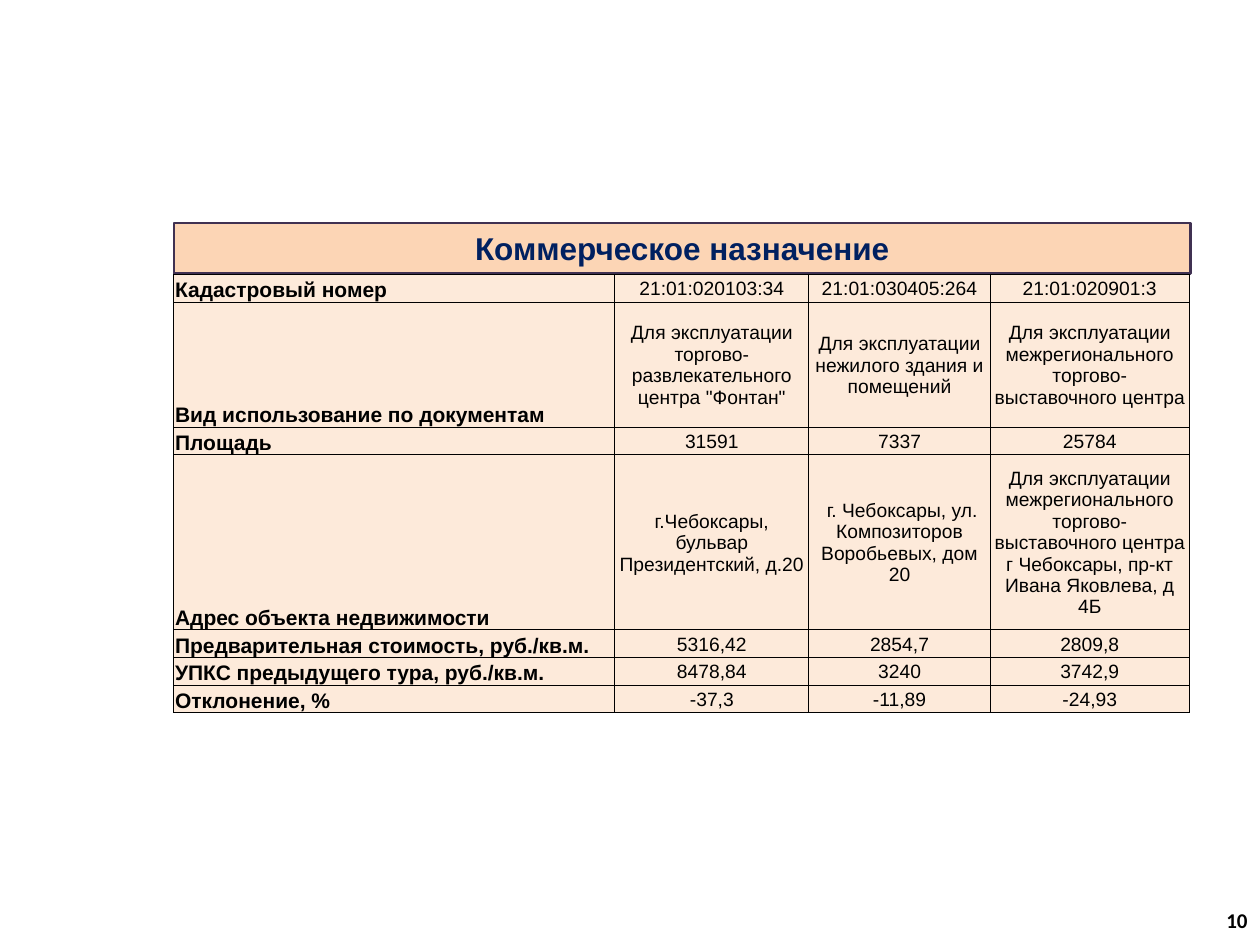
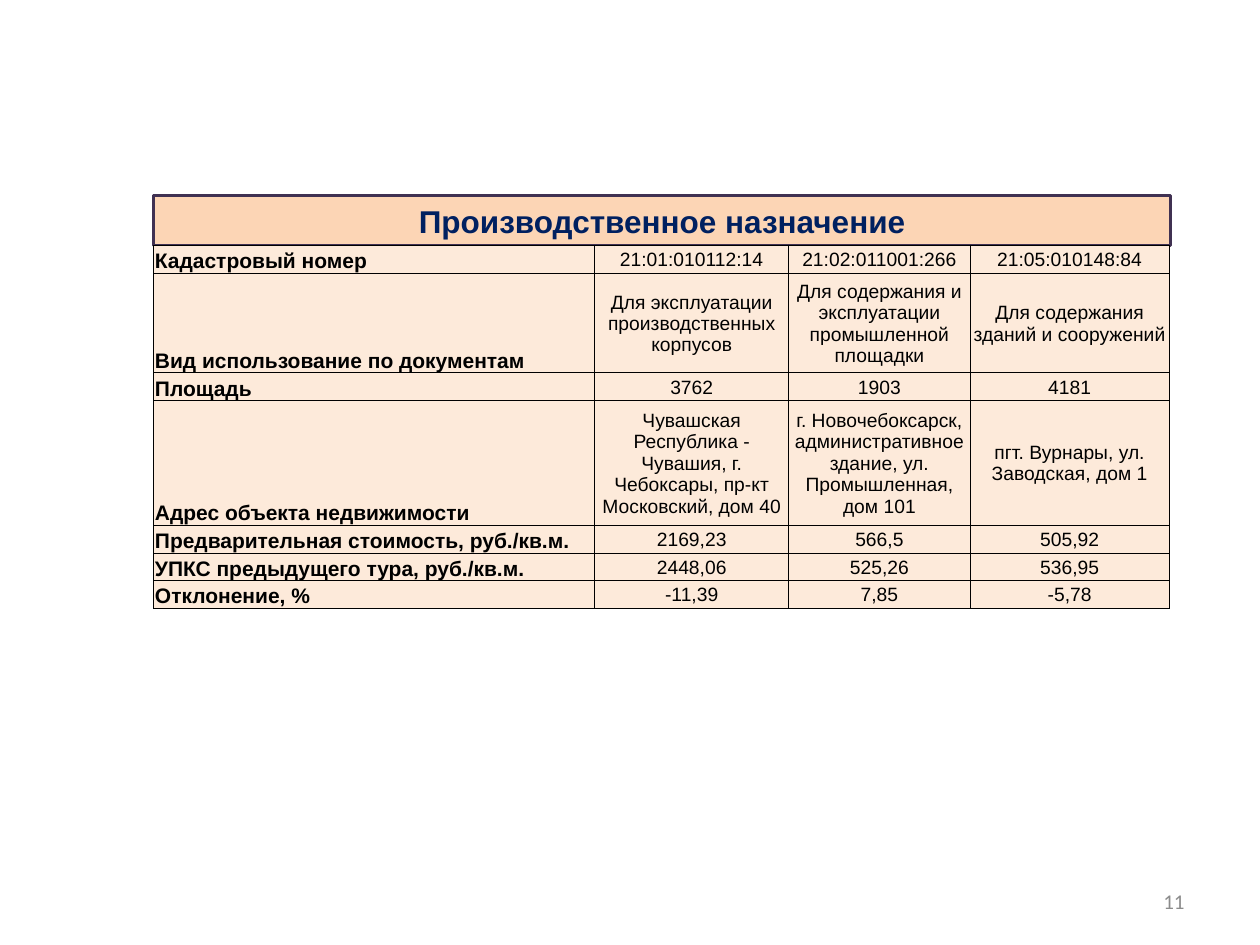
import pptx
import pptx.dml.color
import pptx.enum.text
import pptx.oxml.ns
import pptx.util
import lxml.etree

Inches = pptx.util.Inches
Pt = pptx.util.Pt
ALIGN = pptx.enum.text.PP_ALIGN
ANCHOR = pptx.enum.text.MSO_ANCHOR

COLOURS = {
    "band": "FCD5B5",
    "band_line": "403152",
    "title": "002060",
    "cell": "FDEADA",
    "ink": "000000",
    "muted": "8C8C8C",
}
TITLE_ONLY_LAYOUT = 5
TABLE_WIDTH = 8.07
BAND_HEIGHT = 0.4
COLUMN_WIDTHS = [3.5, 1.54, 1.44, 1.58]
LINE_ROW = 0.22
ROW_LABELS = [
    "Кадастровый номер",
    "Вид использование по документам",
    "Площадь",
    "Адрес объекта недвижимости",
    "Предварительная стоимость, руб./кв.м.",
    "УПКС предыдущего тура, руб./кв.м.",
    "Отклонение, %",
]

COMMERCIAL = [
    ["21:01:020103:34", "21:01:030405:264", "21:01:020901:3"],
    [
        "Для эксплуатации торгово-развлекательного центра \"Фонтан\"",
        "Для эксплуатации нежилого здания и помещений",
        "Для эксплуатации межрегионального торгово-выставочного центра",
    ],
    ["31591", "7337", "25784"],
    [
        "г.Чебоксары, бульвар Президентский, д.20",
        " г. Чебоксары, ул. Композиторов Воробьевых, дом 20",
        "Для эксплуатации межрегионального торгово-выставочного центра "
        "г Чебоксары, пр-кт Ивана Яковлева, д 4Б",
    ],
    ["5316,42", "2854,7", "2809,8"],
    ["8478,84", "3240", "3742,9"],
    ["-37,3", "-11,89", "-24,93"],
]

INDUSTRIAL = [
    ["21:01:010112:14", "21:02:011001:266", "21:05:010148:84"],
    [
        "Для эксплуатации производственных корпусов",
        "Для содержания и эксплуатации промышленной площадки",
        "Для содержания зданий и сооружений",
    ],
    ["3762", "1903", "4181"],
    [
        "Чувашская Республика - Чувашия, г. Чебоксары, пр-кт Московский, дом 40",
        "г. Новочебоксарск, административное здание, ул. Промышленная, дом 101",
        "пгт. Вурнары, ул. Заводская, дом 1",
    ],
    ["2169,23", "566,5", "505,92"],
    ["2448,06", "525,26", "536,95"],
    ["-11,39", "7,85", "-5,78"],
]


class SlideBuilder:
    def __init__(self, deck):
        self.deck = deck
        self.page = None

    def colour(self, name):
        return pptx.dml.color.RGBColor.from_string(COLOURS[name])

    def new_page(self):
        layout = self.deck.slide_layouts[TITLE_ONLY_LAYOUT]
        self.page = self.deck.slides.add_slide(layout)

    def add_text(self, frame, text, size, colour="ink", bold=False,
                 align=ALIGN.LEFT, font="Arial"):
        para = frame.paragraphs[0]
        para.alignment = align
        span = para.add_run()
        span.text = text
        span.font.name = font
        span.font.size = Pt(size)
        span.font.bold = bold
        span.font.color.rgb = self.colour(colour)

    def title_band(self, text, left, top):
        band = self.page.shapes.title
        band.left, band.top = Inches(left), Inches(top)
        band.width, band.height = Inches(TABLE_WIDTH), Inches(BAND_HEIGHT)
        band.fill.solid()
        band.fill.fore_color.rgb = self.colour("band")
        band.line.color.rgb = self.colour("band_line")
        band.line.width = Pt(1.5)
        frame = band.text_frame
        frame.auto_size = pptx.enum.text.MSO_AUTO_SIZE.NONE
        frame.word_wrap = True
        frame.vertical_anchor = ANCHOR.MIDDLE
        self.add_text(frame, text, 18, "title", True, ALIGN.CENTER)

    def page_number(self, number, left, top, colour, bold):
        box = self.page.shapes.add_textbox(
            Inches(left), Inches(top), Inches(2.33), Inches(0.4))
        frame = box.text_frame
        frame.word_wrap = True
        frame.vertical_anchor = ANCHOR.MIDDLE
        self.add_text(frame, str(number), 12, colour, bold, ALIGN.RIGHT, "Calibri")

    def border(self, cell):
        properties = cell._tc.get_or_add_tcPr()
        for side in ("lnL", "lnR", "lnT", "lnB"):
            edge = lxml.etree.SubElement(
                properties, pptx.oxml.ns.qn("a:" + side), w=str(Pt(0.5)))
            fill = lxml.etree.SubElement(edge, pptx.oxml.ns.qn("a:solidFill"))
            lxml.etree.SubElement(
                fill, pptx.oxml.ns.qn("a:srgbClr"), val=COLOURS["ink"])

    def table_cell(self, cell, text, is_label):
        self.border(cell)
        cell.fill.solid()
        cell.fill.fore_color.rgb = self.colour("cell")
        cell.margin_left = cell.margin_right = cell.margin_top = Inches(0.01)
        cell.margin_bottom = 0
        cell.vertical_anchor = ANCHOR.BOTTOM if is_label else ANCHOR.MIDDLE
        if is_label:
            self.add_text(cell.text_frame, text, 12, bold=True)
        else:
            self.add_text(cell.text_frame, text, 11, align=ALIGN.CENTER)

    def parcel_table(self, values, left, top, usage_height, address_height):
        heights = [LINE_ROW, usage_height, LINE_ROW, address_height] + [LINE_ROW] * 3
        table = self.page.shapes.add_table(
            len(heights), len(COLUMN_WIDTHS), Inches(left), Inches(top),
            Inches(TABLE_WIDTH), Inches(sum(heights))).table
        table.first_row = False
        table.horz_banding = False
        for column, width in zip(table.columns, COLUMN_WIDTHS):
            column.width = Inches(width)
        for row, height, label, entries in zip(table.rows, heights, ROW_LABELS, values):
            row.height = Inches(height)
            for index, (cell, text) in enumerate(zip(row.cells, [label] + entries)):
                self.table_cell(cell, text, index == 0)


def main():
    deck = pptx.Presentation()
    deck.slide_width, deck.slide_height = Inches(10), Inches(7.5)
    builder = SlideBuilder(deck)

    builder.new_page()
    builder.page_number(10, 7.67, 7.1, "ink", True)
    builder.title_band("Коммерческое назначение", 1.38, 1.77)
    builder.parcel_table(COMMERCIAL, 1.38, 2.18, 0.99, 1.39)

    builder.new_page()
    builder.page_number(11, 7.17, 6.95, "muted", False)
    builder.title_band("Производственное назначение", 1.22, 1.55)
    builder.parcel_table(INDUSTRIAL, 1.22, 1.95, 0.79, 0.99)

    deck.save("out.pptx")


if __name__ == "__main__":
    main()
